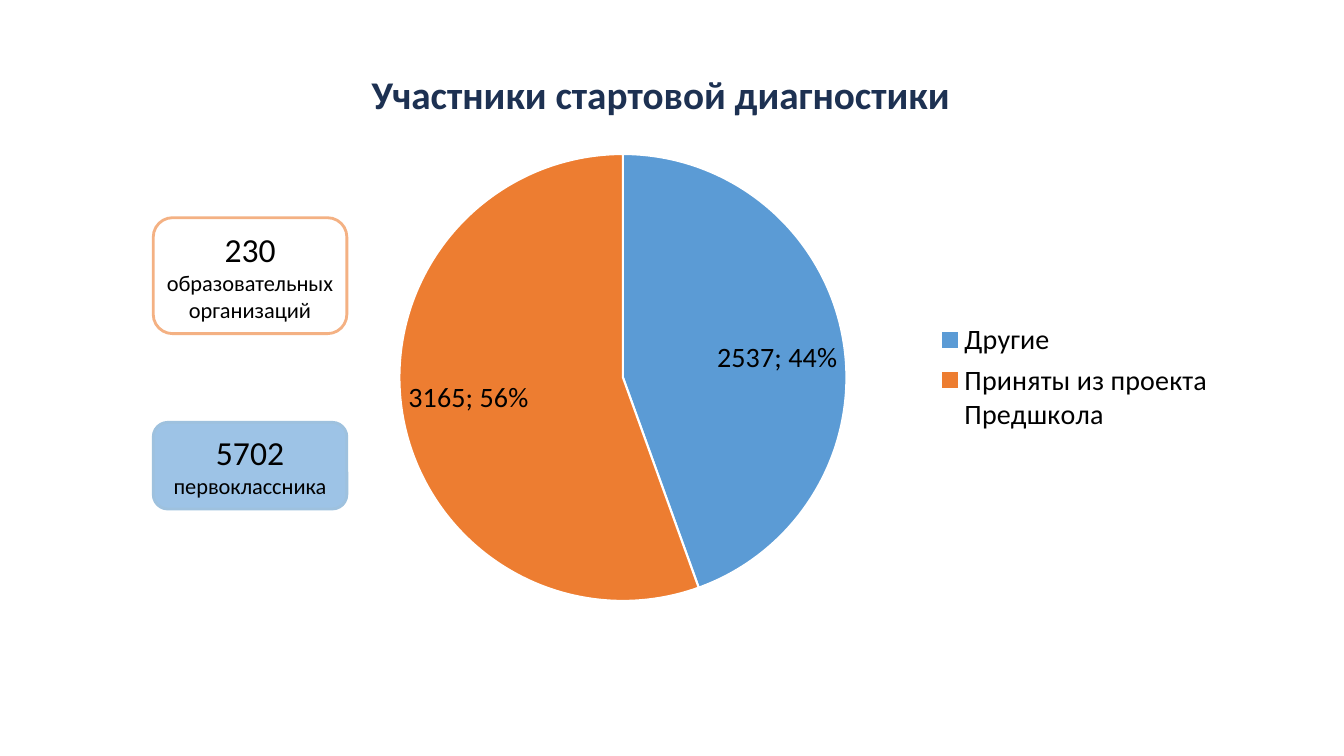
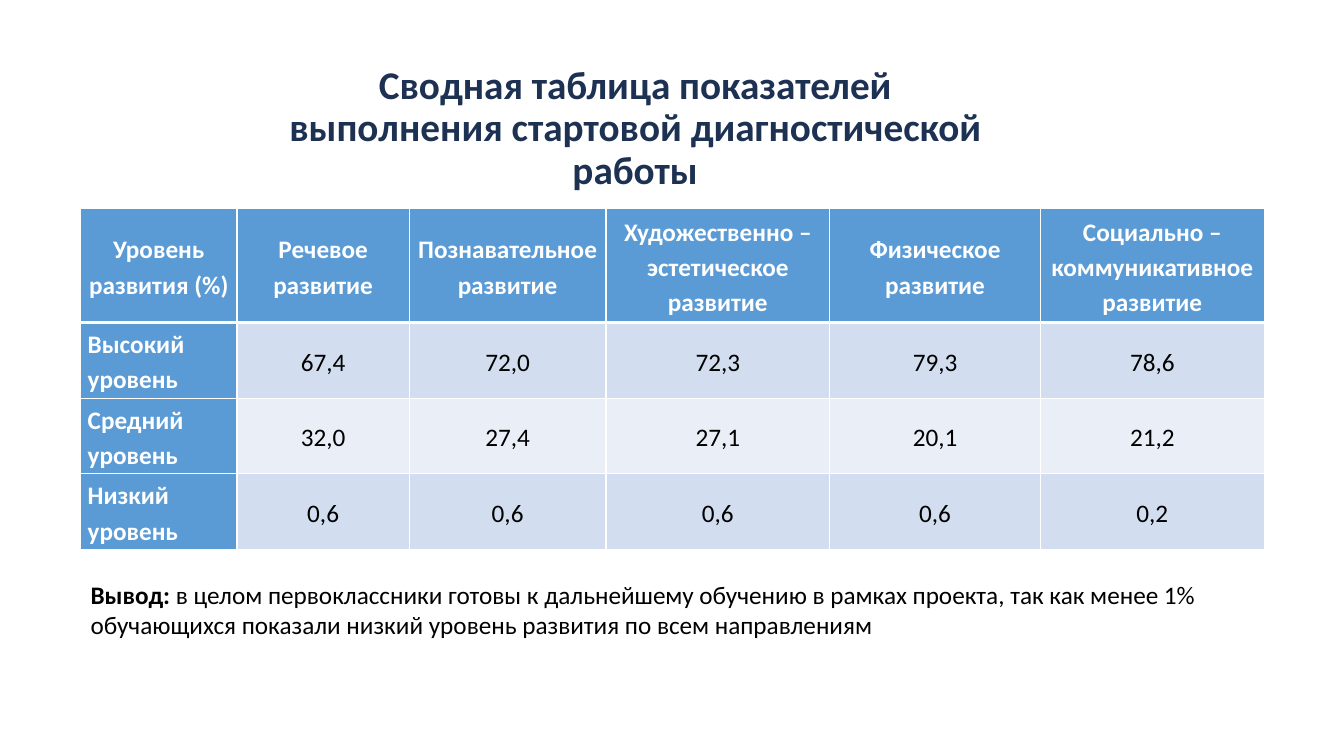
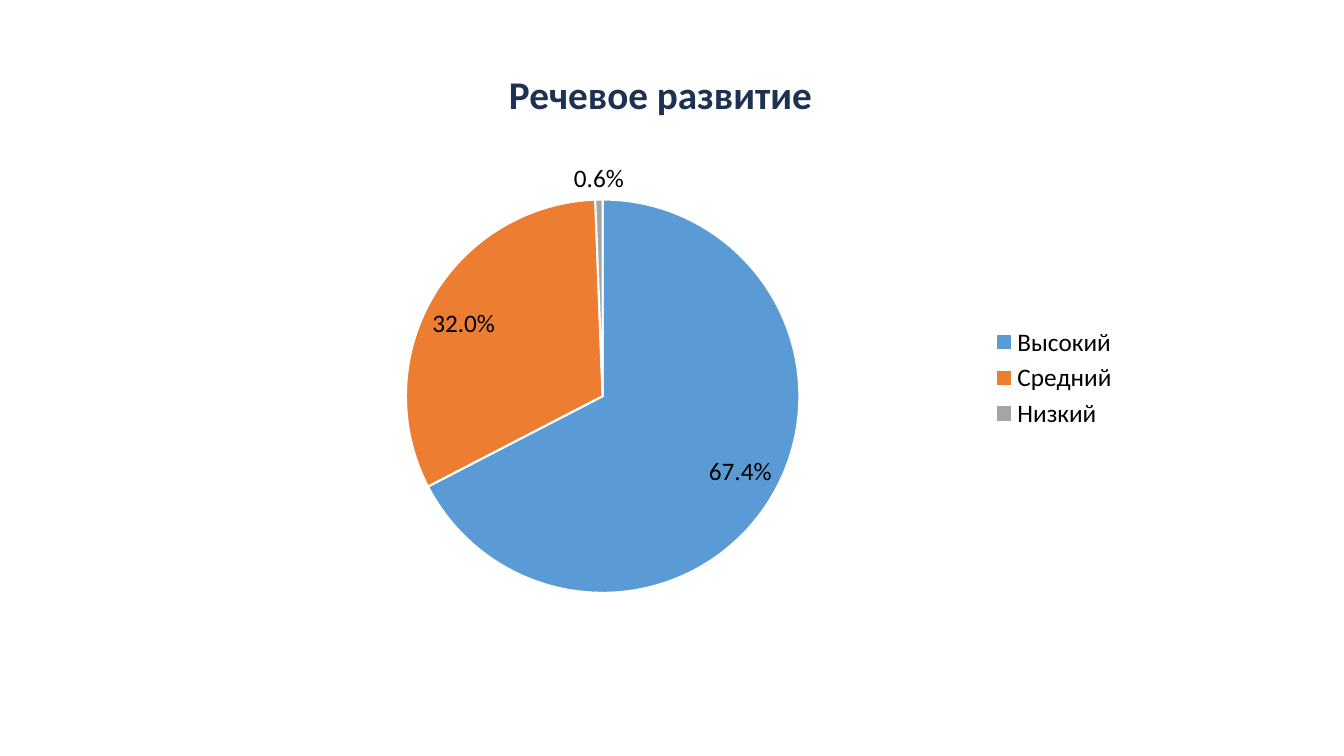
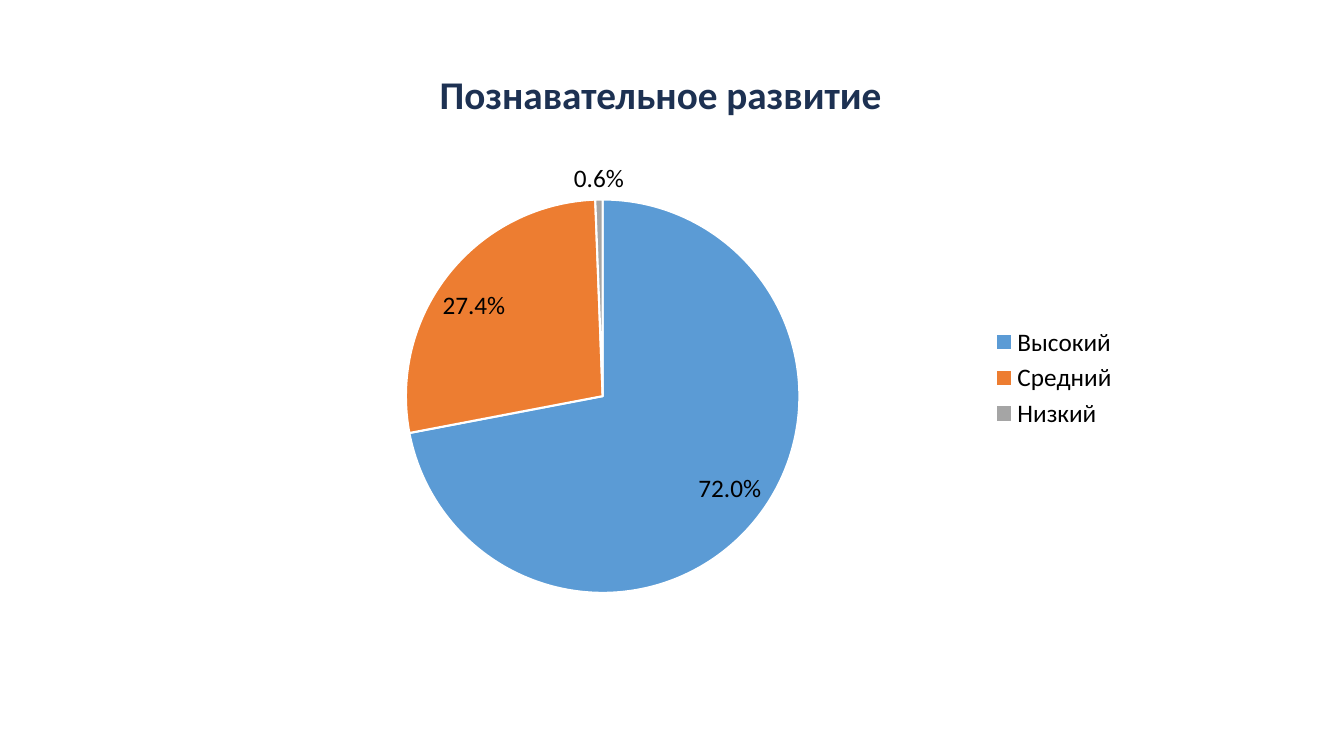
from lxml import etree
from pptx import Presentation
from pptx.chart.data import CategoryChartData as ChartData
from pptx.dml.color import RGBColor as RGB
from pptx.enum.chart import XL_CHART_TYPE as Chart, XL_LABEL_POSITION as Spot
from pptx.enum.chart import XL_LEGEND_POSITION as Side
from pptx.enum.shapes import MSO_SHAPE as Shape
from pptx.enum.text import MSO_ANCHOR as Anchor, MSO_AUTO_SIZE as Auto, PP_ALIGN as Align
from pptx.oxml.ns import qn
from pptx.util import Inches, Pt

FONT = "Calibri"
COLORS = {
    "title": "1D3152", "text": "000000", "white": "FFFFFF",
    "blue": "5B9BD5", "orange": "ED7D31", "gray": "A5A5A5",
    "peach": "F4B183", "sky": "9DC3E6", "edge": "9EC1DE",
    "band": "D2DEEF", "pale": "EAEFF7",
}
SLICES = ("blue", "orange", "gray")
LEVELS = ("Высокий", "Средний", "Низкий")
TITLE_BOX = (3.44, 0.7, 6.22, 0.53)
LEVEL_BOX = (2.15, 1.48, 9.04, 4.54)

HEADS = ("Уровень развития (%)", "Речевое развитие", "Познавательное развитие",
         "Художественно – эстетическое развитие", "Физическое развитие",
         "Социально – коммуникативное развитие")
RATES = (
    ("Высокий уровень", "67,4", "72,0", "72,3", "79,3", "78,6"),
    ("Средний уровень", "32,0", "27,4", "27,1", "20,1", "21,2"),
    ("Низкий уровень", "0,6", "0,6", "0,6", "0,6", "0,2"),
)
WIDTHS = (1.55, 1.71, 1.95, 2.22, 2.09, 2.22)
HEIGHTS = (1.13, 0.75, 0.75, 0.75)


def color(name):
    return RGB.from_string(COLORS[name])


def place(box):
    return [Inches(n) for n in box]


def style(font, size, tint="text", bold=False):
    font.name, font.size, font.bold = FONT, Pt(size), bold
    font.color.rgb = color(tint)


def fit(frame, inset=None):
    """Wrap the text, grow the shape and set equal insets."""
    frame.word_wrap = True
    frame.auto_size = Auto.SHAPE_TO_FIT_TEXT
    if inset is not None:
        frame.margin_left = frame.margin_right = Inches(inset)
        frame.margin_top = frame.margin_bottom = Inches(inset)


def add_title(slide, text, box=TITLE_BOX):
    frame = slide.shapes.add_textbox(*place(box)).text_frame
    fit(frame, 0.05)
    frame.text = text
    para = frame.paragraphs[0]
    para.alignment, para.line_spacing = Align.CENTER, 0.9
    style(para.runs[0].font, 28, "title", True)


def add_card(slide, box, count, label, line, fill=None):
    card = slide.shapes.add_shape(Shape.ROUNDED_RECTANGLE, *place(box))
    card.shadow.inherit = False
    if fill:
        card.fill.solid()
        card.fill.fore_color.rgb = color(fill)
    else:
        card.fill.background()
    card.line.color.rgb, card.line.width = color(line), Pt(2)
    frame = card.text_frame
    fit(frame, 0.05)
    frame.vertical_anchor = Anchor.MIDDLE
    frame.text = f"{count}\n{label}"
    for para, size in zip(frame.paragraphs, (24, 16)):
        para.alignment = Align.CENTER
        style(para.runs[0].font, size)


def add_pie(slide, box, name, cats, vals, size, form=None):
    """Pie with a legend; without a number format, labels add the percentage."""
    data = ChartData()
    data.categories = cats
    data.add_series(name, vals)
    chart = slide.shapes.add_chart(Chart.PIE, *place(box), data).chart
    chart.has_title = False
    style(chart.font, size)
    chart.has_legend = True
    chart.legend.position = Side.RIGHT
    chart.legend.include_in_layout = False
    style(chart.legend.font, size)

    # Slices
    plot = chart.plots[0]
    plot.vary_by_categories = True
    for i, tint in enumerate(SLICES[:len(cats)]):
        part = plot.series[0].points[i].format
        part.fill.solid()
        part.fill.fore_color.rgb = color(tint)
        part.line.color.rgb, part.line.width = color("white"), Pt(1.5)

    # Labels
    labels = plot.series[0].data_labels
    style(labels.font, size)
    labels.position = Spot.BEST_FIT
    labels.show_value = True
    if form:
        labels.number_format, labels.number_format_is_linked = form, False
    else:
        labels.show_percentage = True
        mark = etree.Element(qn("c:separator"))
        mark.text = "; "
        labels._element.find(qn("c:showBubbleSize")).addnext(mark)


def add_borders(cell, top, bottom):
    props = cell._tc.get_or_add_tcPr()
    for i, (side, width) in enumerate(zip("LRTB", (1, 1, top, bottom))):
        line = etree.Element(qn(f"a:ln{side}"), w=str(Pt(width)))
        fill = etree.SubElement(line, qn("a:solidFill"))
        etree.SubElement(fill, qn("a:srgbClr"), val=COLORS["white"])
        props.insert(i, line)


def fill_cell(cell, text, row, col):
    head = row == 0 or col == 0
    cell.fill.solid()
    cell.fill.fore_color.rgb = color("blue" if head else ("pale", "band")[row % 2])
    add_borders(cell, 3 if row == 1 else 1, 3 if row == 0 else 1)
    cell.margin_left = cell.margin_right = Inches(0.07)
    cell.margin_top = cell.margin_bottom = 0
    cell.vertical_anchor = Anchor.MIDDLE
    cell.text_frame.text = text
    para = cell.text_frame.paragraphs[0]
    para.alignment = Align.LEFT if row and col == 0 else Align.CENTER
    para.line_spacing = 1.15
    style(para.runs[0].font, 18, "white" if head else "text", head)


def add_rates(slide, box):
    table = slide.shapes.add_table(len(HEIGHTS), len(WIDTHS), *place(box)).table
    for col, width in zip(table.columns, WIDTHS):
        col.width = Inches(width)
    for row, height in zip(table.rows, HEIGHTS):
        row.height = Inches(height)
    for r, texts in enumerate((HEADS, *RATES)):
        for c, text in enumerate(texts):
            fill_cell(table.cell(r, c), text, r, c)


def add_note(slide, box, lead, rest):
    frame = slide.shapes.add_textbox(*place(box)).text_frame
    fit(frame)
    for text, bold in ((lead, True), (rest, False)):
        run = frame.paragraphs[0].add_run()
        run.text = text
        style(run.font, 18, bold=bold)


def draw_people(slide):
    title = "Участники стартовой диагностики"
    add_pie(slide, (3.11, 1.39, 9.04, 4.71), title,
            ("Другие", "Приняты из проекта Предшкола"), (2537, 3165), 20)
    add_title(slide, title)
    add_card(slide, (1.52, 2.16, 1.92, 1.15), "230", "образовательных организаций", "peach")
    add_card(slide, (1.52, 4.19, 1.92, 0.86), "5702", "первоклассника", "edge", "sky")


def draw_table(slide):
    add_title(slide, "Сводная таблица показателей выполнения стартовой "
              "диагностической работы", (2.77, 0.6, 7.06, 0.95))
    add_rates(slide, (0.8, 2.07, 11.74, 3.37))
    add_note(slide, (0.8, 5.7, 11.74, 0.71), "Вывод:",
             " в целом первоклассники готовы к дальнейшему обучению в рамках проекта, "
             "так как менее 1% обучающихся показали низкий уровень развития по всем "
             "направлениям")


def draw_levels(slide, title, vals):
    add_pie(slide, LEVEL_BOX, title, LEVELS, vals, 18, "0.0%")
    add_title(slide, title)


def main():
    deck = Presentation()
    deck.slide_width, deck.slide_height = Inches(13.33), Inches(7.5)

    def new():
        return deck.slides.add_slide(deck.slide_layouts[6])

    draw_people(new())
    draw_table(new())
    draw_levels(new(), "Речевое развитие", (0.674, 0.32, 0.006))
    draw_levels(new(), "Познавательное развитие", (0.72, 0.274, 0.006))
    deck.save("out.pptx")


if __name__ == "__main__":
    main()
